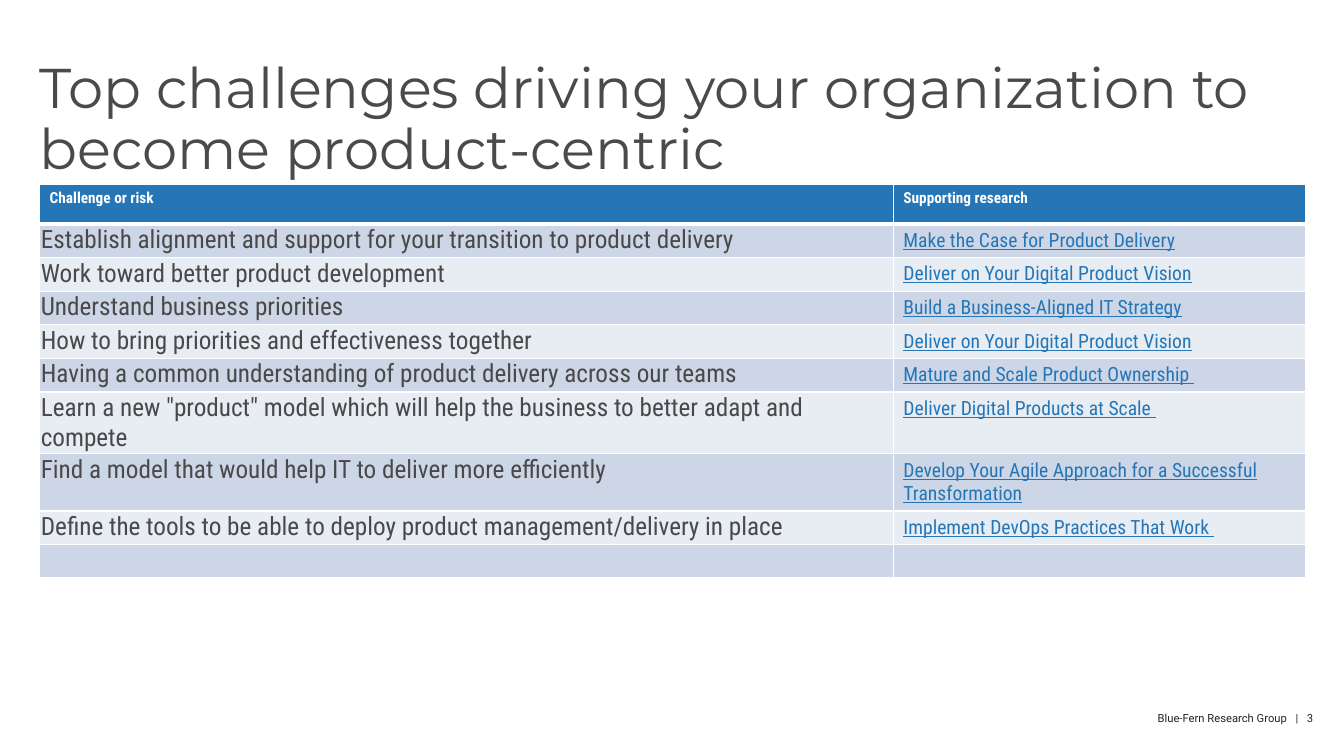
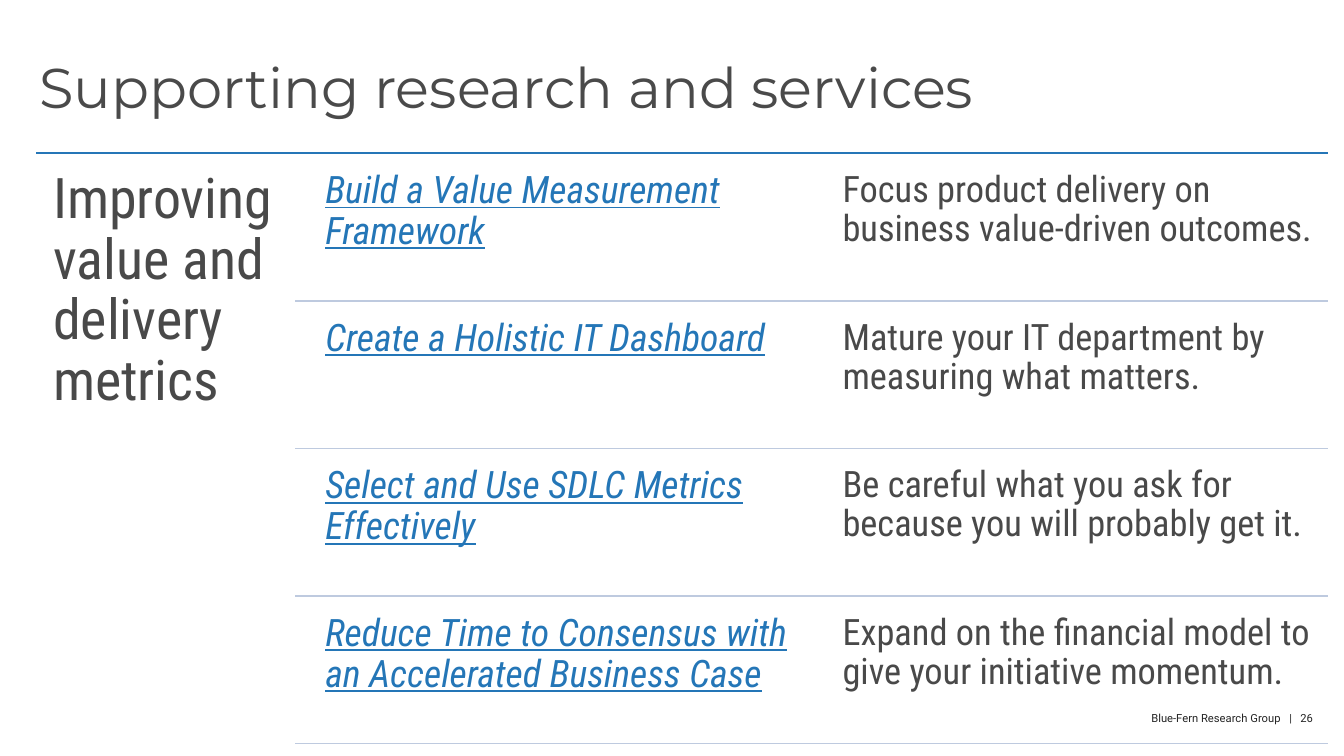
from lxml import etree
from pptx import Presentation
from pptx import util as u
from pptx.dml.color import RGBColor
from pptx.enum import shapes, text
from pptx.oxml.ns import qn

rgb = RGBColor.from_string
BLUE = "2576B7"
LINK = "2476B7"
BODY = "494949"
RULE = "BECADF"
WHITE = "FFFFFF"
BANDS = ["CDD6E6", "E8ECF3"]
CONDENSED = "Roboto Condensed"


def write_text(frame, words, size, color=BODY, font=CONDENSED, bold=False, italic=False,
               underline=False, spacing=None, align=text.PP_ALIGN.LEFT, margin=None, gap=0):
    frame.word_wrap = True
    paragraph = frame.paragraphs[0]
    paragraph.alignment = align
    if spacing:
        paragraph.line_spacing = spacing
    if margin is not None:
        frame.margin_left = frame.margin_right = u.Cm(margin)
        frame.margin_top = frame.margin_bottom = u.Cm(margin)
    run = paragraph.add_run()
    run.text = words
    run.font.name = font
    run.font.size = u.Pt(size)
    run.font.bold = bold
    run.font.italic = italic
    run.font.underline = underline
    run.font.color.rgb = rgb(color)
    if gap:
        run.font._element.set("spc", str(gap * 100))


def add_rule(slide, left, top, right, color):
    rule = slide.shapes.add_connector(
        shapes.MSO_CONNECTOR.STRAIGHT, u.Cm(left), u.Cm(top), u.Cm(right), u.Cm(top))
    rule.line.color.rgb = rgb(color)
    rule.line.width = u.Pt(1)
    etree.SubElement(rule._element.spPr, qn("a:effectLst"))


presentation = Presentation()
presentation.slide_width = u.Cm(33.88)
presentation.slide_height = u.Cm(19.05)

titles = [
    ("Top challenges driving your organization to become product-centric", "3"),
    ("Supporting research and services", "26"),
]
for title, number in titles:
    slide = presentation.slides.add_slide(presentation.slide_layouts[6])
    footer = slide.shapes.add_textbox(u.Cm(24.2), u.Cm(17.93), u.Cm(8.9), u.Cm(0.33))
    for words, gap in [("Blue-Fern Research Group", 0), (" ", 4), ("|", 0), (" ", 4), (number, 0)]:
        write_text(footer.text_frame, words, size=8, color="242424", font="Roboto",
                   align=text.PP_ALIGN.RIGHT, margin=0, gap=gap)
    heading = slide.shapes.add_textbox(u.Cm(1), u.Cm(1.52), u.Cm(32), u.Cm(3.15))
    write_text(heading.text_frame, title, size=40, color="4A4A4A", font="Montserrat",
               spacing=0.9, margin=0)

challenges_slide, research_slide = presentation.slides

challenges = [
    ("Challenge or risk", "Supporting research"),
    ("Establish alignment and support for your transition to product delivery",
     "Make the Case for Product Delivery"),
    ("Work toward better product development", "Deliver on Your Digital Product Vision"),
    ("Understand business priorities", "Build a Business-Aligned IT Strategy"),
    ("How to bring priorities and effectiveness together",
     "Deliver on Your Digital Product Vision"),
    ("Having a common understanding of product delivery across our teams",
     "Mature and Scale Product Ownership "),
    ('Learn a new "product" model which will help the business to better adapt and compete',
     "Deliver Digital Products at Scale "),
    ("Find a model that would help IT to deliver more efficiently",
     "Develop Your Agile Approach for a Successful Transformation"),
    ("Define the tools to be able to deploy product management/delivery in place",
     "Implement DevOps Practices That Work "),
    ("", ""),
]
header_format = dict(size=10.9, color=WHITE, bold=True)
column_formats = [dict(size=18), dict(size=14, color=LINK, underline=True)]
row_heights = [0.99] + [0.83] * 6 + [1.4] + [0.83] * 2

table = challenges_slide.shapes.add_table(
    len(challenges), 2, u.Cm(1), u.Cm(4.65), u.Cm(31.91), u.Cm(sum(row_heights))).table
for column, width in zip(table.columns, [21.52, 10.39]):
    column.width = u.Cm(width)
for row_index, row in enumerate(challenges):
    table.rows[row_index].height = u.Cm(row_heights[row_index])
    for column_index, words in enumerate(row):
        cell = table.cell(row_index, column_index)
        if row_index and column_index == 0:
            cell.margin_left = cell.margin_right = cell.margin_top = u.Cm(0.03)
            cell.margin_bottom = 0
        if words:
            cell_format = column_formats[column_index] if row_index else header_format
            write_text(cell.text_frame, words, **cell_format)
        else:
            etree.SubElement(cell.text_frame.paragraphs[0]._p, qn("a:endParaRPr"), sz="1000")
        properties = cell._tc.get_or_add_tcPr()
        for side in ["lnL", "lnR", "lnT", "lnB"]:
            thick = (row_index, side) in [(0, "lnB"), (1, "lnT")]
            border = etree.SubElement(
                properties, qn("a:" + side), w=str(u.Pt(3 if thick else 1)))
            border_fill = etree.SubElement(border, qn("a:solidFill"))
            etree.SubElement(border_fill, qn("a:srgbClr"), val=WHITE)
        cell.fill.solid()
        cell.fill.fore_color.rgb = rgb(BANDS[(row_index - 1) % 2] if row_index else BLUE)

research = [
    ("Build a Value Measurement Framework",
     "Focus product delivery on business value-driven outcomes."),
    ("Create a Holistic IT Dashboard", "Mature your IT department by measuring what matters."),
    ("Select and Use SDLC Metrics Effectively",
     "Be careful what you ask for because you will probably get it."),
    ("Reduce Time to Consensus with an Accelerated Business Case",
     "Expand on the financial model to give your initiative momentum."),
]
research_columns = [
    (7.92, dict(size=27, color=LINK, italic=True, underline=True)),
    (20.96, dict(size=26)),
]
list_top = 3.86
row_pitch = 3.72
rule_right = 33.48

add_rule(research_slide, 0.91, list_top, rule_right, BLUE)
topic = research_slide.shapes.add_textbox(u.Cm(0.91), u.Cm(list_top), u.Cm(6.5), u.Cm(15.06))
write_text(topic.text_frame, "Improving value and delivery metrics", size=40,
           spacing=0.9, margin=0.43)
for index, row in enumerate(research):
    row_top = list_top + index * row_pitch
    for words, (left, column_format) in zip(row, research_columns):
        box = research_slide.shapes.add_textbox(
            u.Cm(left), u.Cm(row_top + 0.17), u.Cm(12.55), u.Cm(3.53))
        write_text(box.text_frame, words, spacing=0.9, margin=0.28, **column_format)
    add_rule(research_slide, 7.44, row_top + row_pitch, rule_right, RULE)

presentation.save("out.pptx")
